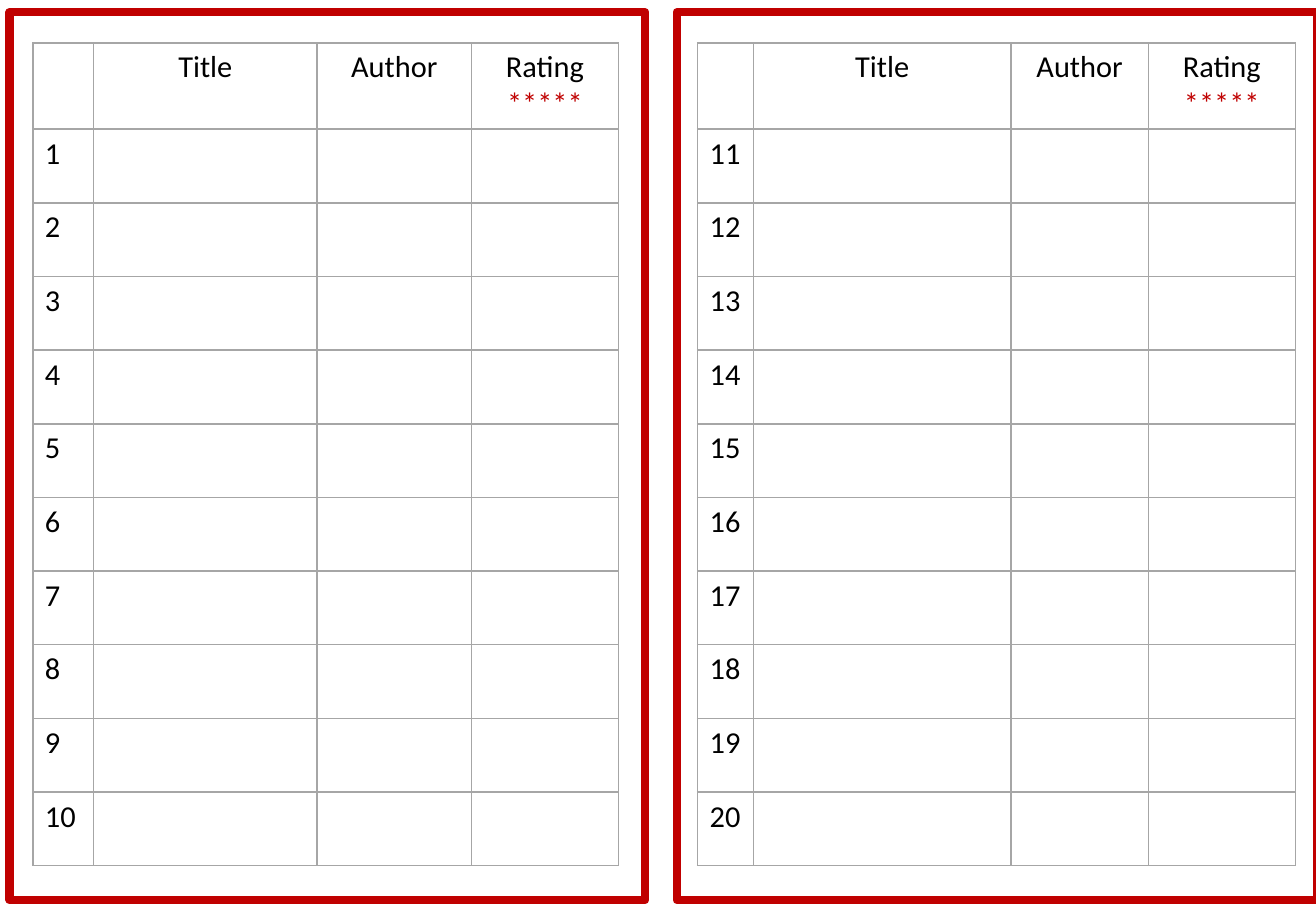
from dataclasses import dataclass

from lxml import etree
from pptx import Presentation
from pptx import util as u
from pptx.dml.color import RGBColor
from pptx.enum import shapes, text
from pptx.oxml import ns

EMU_PER_PX = 3048  # 300 px to the inch


def px(length: int) -> u.Emu:
    return u.Emu(length * EMU_PER_PX)


@dataclass(frozen=True)
class Theme:
    font: str = "Calibri"
    text_size: int = 18
    ink: str = "000000"
    accent: str = "C00000"
    grid: str = "A6A6A6"
    frame_width: int = 5
    grid_width: int = 1


@dataclass(frozen=True)
class BookPage:
    frame_left: int
    frame_width: int
    list_left: int
    columns: tuple[int, ...]
    first_number: int


THEME = Theme()
SLIDE_WIDTH, SLIDE_HEIGHT = 3249, 2250
FRAME_TOP, FRAME_HEIGHT = 30, 2193
LIST_TOP, HEADER_HEIGHT, ROW_HEIGHT = 106, 213, 182
BOOKS_PER_PAGE = 10
HEADINGS = (
    (),
    (("Title", THEME.ink),),
    (("Author", THEME.ink),),
    (("Rating", THEME.ink), ("*****", THEME.accent)),
)
PAGES = (
    BookPage(1671, 1581, 1722, (138, 636, 339, 363), 11),
    BookPage(24, 1569, 81, (150, 552, 381, 363), 1),
)


def draw_frame(slide, page: BookPage) -> None:
    frame = slide.shapes.add_shape(
        shapes.MSO_SHAPE.RECTANGLE,
        px(page.frame_left), px(FRAME_TOP), px(page.frame_width), px(FRAME_HEIGHT),
    )
    frame.shadow.inherit = False
    frame.fill.background()
    frame.line.color.rgb = RGBColor.from_string(THEME.accent)
    frame.line.width = u.Pt(THEME.frame_width)


def write(paragraph, words: str, color: str) -> None:
    run = paragraph.add_run()
    run.text = words
    run.font.name = THEME.font
    run.font.size = u.Pt(THEME.text_size)
    run.font.color.rgb = RGBColor.from_string(color)


def style_cell(cell) -> None:
    """Clear the fill and rule all four sides."""
    cell.fill.background()
    properties = cell._tc.get_or_add_tcPr()
    for position, side in enumerate(("lnL", "lnR", "lnT", "lnB")):
        border = etree.Element(ns.qn(f"a:{side}"), w=str(u.Pt(THEME.grid_width)))
        fill = etree.SubElement(border, ns.qn("a:solidFill"))
        etree.SubElement(fill, ns.qn("a:srgbClr"), val=THEME.grid)
        properties.insert(position, border)


def draw_list(slide, page: BookPage) -> None:
    books = slide.shapes.add_table(
        BOOKS_PER_PAGE + 1, len(page.columns),
        px(page.list_left), px(LIST_TOP), px(sum(page.columns)),
        px(HEADER_HEIGHT + BOOKS_PER_PAGE * ROW_HEIGHT),
    ).table
    books.first_row = books.horz_banding = False
    for column, width in zip(books.columns, page.columns):
        column.width = px(width)
    for index, row in enumerate(books.rows):
        row.height = px(ROW_HEIGHT if index else HEADER_HEIGHT)
    for cell in books.iter_cells():
        style_cell(cell)

    for column, heading in enumerate(HEADINGS):
        frame = books.cell(0, column).text_frame
        for line, (words, color) in enumerate(heading):
            paragraph = frame.add_paragraph() if line else frame.paragraphs[0]
            paragraph.alignment = text.PP_ALIGN.CENTER
            write(paragraph, words, color)
    for index in range(BOOKS_PER_PAGE):
        number = books.cell(index + 1, 0).text_frame.paragraphs[0]
        write(number, str(page.first_number + index), THEME.ink)


def main() -> None:
    deck = Presentation()
    deck.slide_width, deck.slide_height = px(SLIDE_WIDTH), px(SLIDE_HEIGHT)
    slide = deck.slides.add_slide(deck.slide_layouts[6])
    for page in PAGES:
        draw_frame(slide, page)
    for page in PAGES:
        draw_list(slide, page)
    deck.save("out.pptx")


if __name__ == "__main__":
    main()
